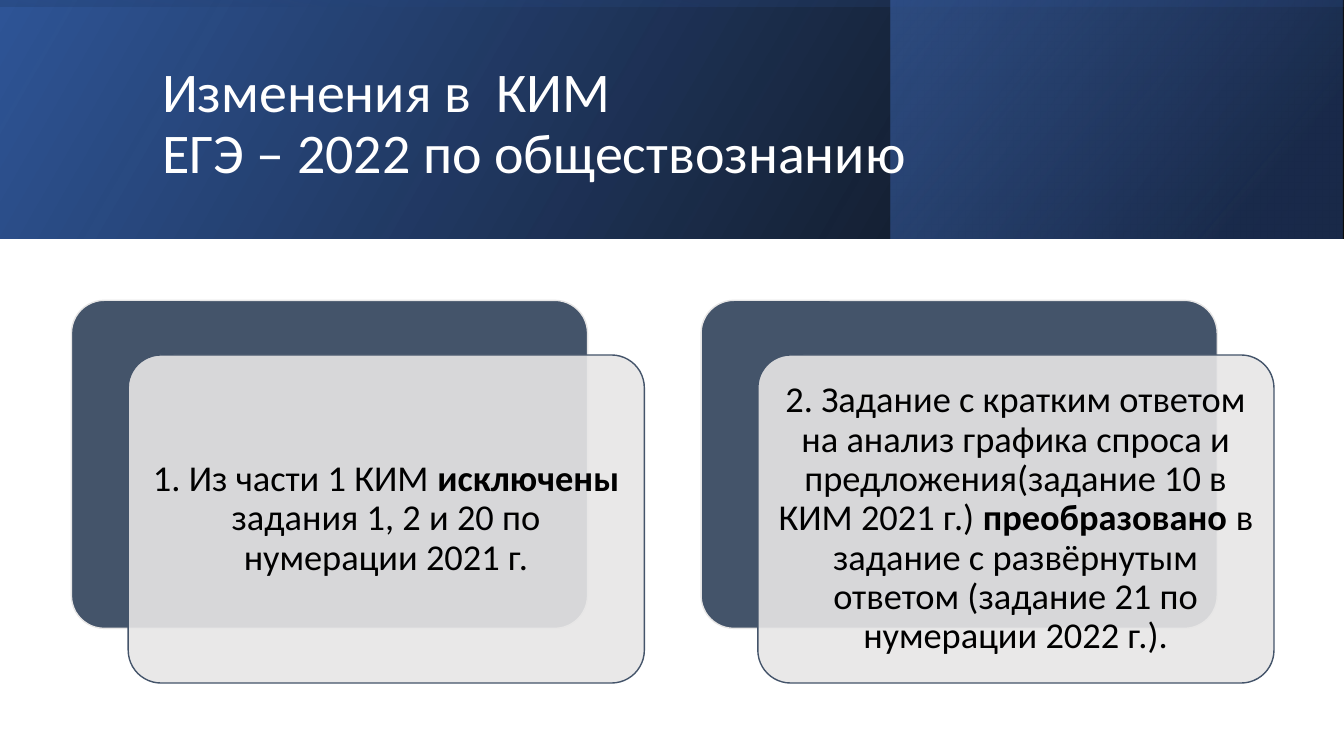
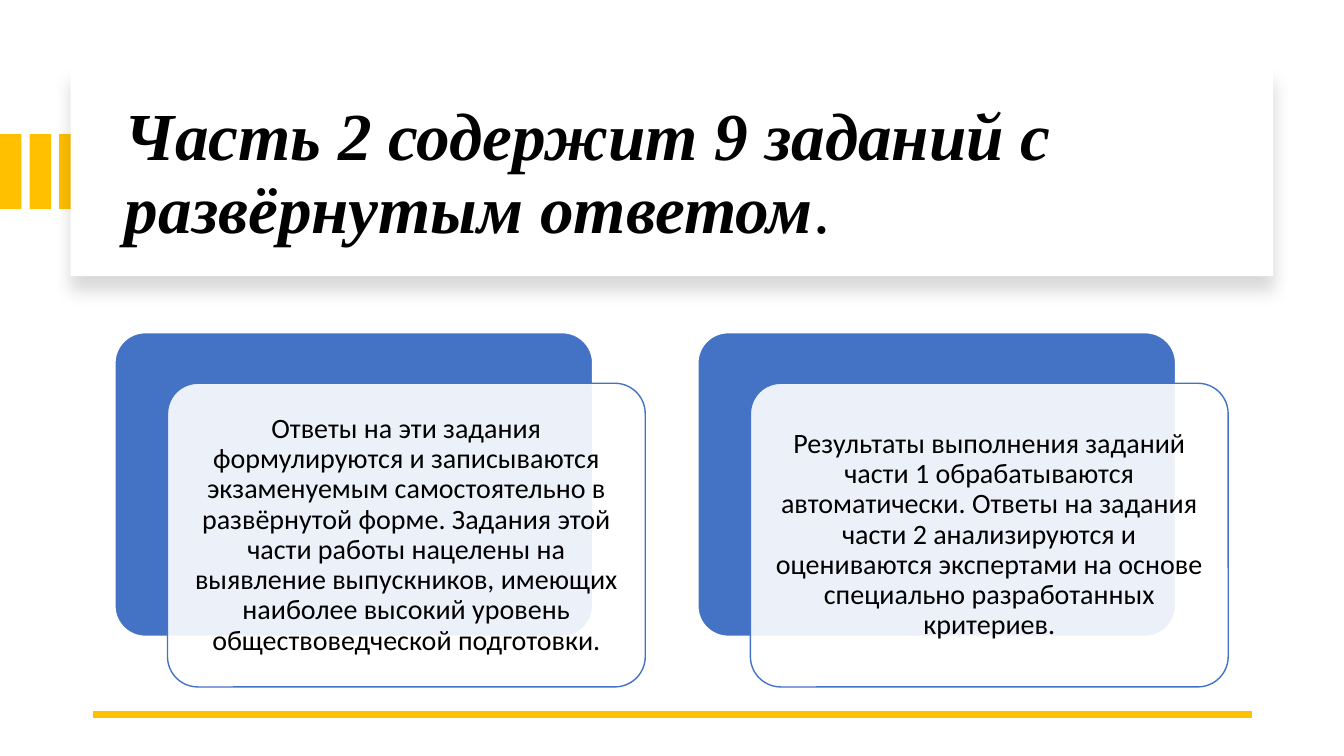
from lxml import etree
from pptx import Presentation
from pptx.dml.color import RGBColor
from pptx.enum.shapes import MSO_CONNECTOR, MSO_SHAPE
from pptx.enum.text import MSO_ANCHOR, PP_ALIGN
from pptx.oxml import parse_xml
from pptx.oxml.ns import qn
from pptx.util import Inches, Pt

RECT, ROUND = MSO_SHAPE.RECTANGLE, MSO_SHAPE.ROUNDED_RECTANGLE
STRAIGHT = MSO_CONNECTOR.STRAIGHT
MIDDLE = MSO_ANCHOR.MIDDLE
LEFT, CENTER = PP_ALIGN.LEFT, PP_ALIGN.CENTER

NS = "http://schemas.openxmlformats.org/drawingml/2006/main"
C = {
    "black": "000000", "white": "FFFFFF", "blue": "4472C4", "deep": "2F5597",
    "navy": "203864", "slate": "44546A", "gray": "E7E6E6", "gold": "FFC000",
}
SANS, SERIF = "Calibri", "Times New Roman"


def rgb(name):
    return RGBColor.from_string(C[name])


def add_color(parent, name, alpha):
    """Append a colour with an opacity in percent to an XML parent."""
    color = etree.SubElement(parent, qn("a:srgbClr"), val=C[name])
    etree.SubElement(color, qn("a:alpha"), val=str(alpha * 1000))


def write(tf, runs, size=20, font=SANS, color="black", align=LEFT):
    """Fill a frame with (text, bold, italic) runs; a newline breaks the line."""
    tf.word_wrap = True
    tf.vertical_anchor = MIDDLE
    p = tf.paragraphs[0]
    p.alignment = align
    p.line_spacing = 0.9
    for text, bold, italic in runs:
        for i, line in enumerate(text.split("\n")):
            if i:
                p.add_line_break()
            r = p.add_run()
            r.text = line
            r.font.name, r.font.size = font, Pt(size)
            r.font.bold, r.font.italic = bold, italic
            r.font.color.rgb = rgb(color)


class Deck:
    """Holds the style and the current slide; lengths are percent of the slide."""

    def __init__(self):
        self.prs = Presentation()
        self.prs.slide_width, self.prs.slide_height = Inches(13.33), Inches(7.5)
        self.slide = None

    def new_slide(self):
        self.slide = self.prs.slides.add_slide(self.prs.slide_layouts[6])

    def box(self, x, y, w, h):
        sw, sh = self.prs.slide_width, self.prs.slide_height
        return [round(share * side / 100)
                for share, side in zip((x, y, w, h), (sw, sh, sw, sh))]

    def shape(self, at, fill=None, line=None, kind=RECT, alpha=100):
        s = self.slide.shapes.add_shape(kind, *self.box(*at))
        s.shadow.inherit = False
        if fill:
            s.fill.solid()
            s.fill.fore_color.rgb = rgb(fill)
            color = s.fill._xPr.find(qn("a:solidFill"))[0]
            if alpha < 100:
                etree.SubElement(color, qn("a:alpha"), val=str(alpha * 1000))
        if line:
            s.line.color.rgb = rgb(line)
            s.line.width = Pt(1)
        else:
            s.line.fill.background()
        return s

    def gradient(self, at, stops, angle, turned=False):
        """Add a mirrored gradient band; a turned one is rotated to fill its box."""
        s = self.shape(at)
        if turned:
            cx, cy = s.left + s.width // 2, s.top + s.height // 2
            s.width, s.height = s.height, s.width
            s.left, s.top = cx - s.width // 2, cy - s.height // 2
            s.rotation = 270
        spPr = s._element.spPr
        spPr.find(qn("a:xfrm")).set("flipH", "1")
        grad = parse_xml(f'<a:gradFill xmlns:a="{NS}" rotWithShape="1"><a:gsLst/>'
                         f'<a:lin ang="{angle * 60000}" scaled="0"/></a:gradFill>')
        for pos, name, alpha in stops:
            gs = etree.SubElement(grad[0], qn("a:gs"), pos=str(pos * 1000))
            add_color(gs, name, alpha)
        spPr.find(qn("a:prstGeom")).addnext(grad)

    def panel(self, at):
        """Add a white panel with a soft shadow below."""
        s = self.shape(at, "white")
        effects = s._element.spPr.find(qn("a:effectLst"))
        shadow = etree.SubElement(
            effects, qn("a:outerShdw"), blurRad=str(Pt(11)), dist=str(Pt(10)),
            dir=str(90 * 60000), algn="t", rotWithShape="0")
        add_color(shadow, "black", 15)

    def title(self, at, runs, **style):
        write(self.slide.shapes.add_textbox(*self.box(*at)).text_frame, runs, **style)

    def rule(self, x1, x2, y):
        x1, y, x2, _ = self.box(x1, y, x2, 0)
        s = self.slide.shapes.add_connector(STRAIGHT, x1, y, x2, y)
        s.line.color.rgb = rgb("gold")
        s.line.width = Pt(4.5)
        etree.SubElement(s._element.spPr, qn("a:effectLst"))

    def cards(self, x, y, w, texts, dark, light, size):
        """Add a row of cards, each a dark plate under a shifted light one."""
        h = 1.13 * w
        for i, runs in enumerate(texts):
            left = x + i * 1.22 * w
            back = self.shape((left, y, w, h), dark, light, ROUND)
            front = self.shape((left + 0.11 * w, y + h / 6, w, h),
                               light, dark, ROUND, alpha=90)
            back.adjustments[0] = front.adjustments[0] = 0.1
            tf = front.text_frame
            tf.margin_left = tf.margin_right = Pt(0.3 * size)
            tf.margin_top = tf.margin_bottom = Pt(0.3 * size)
            write(tf, runs, size=size, align=CENTER)


def changes_slide(deck):
    deck.new_slide()
    band = (0, 0, 100, 31.6)
    deck.gradient(band, [(0, "black", 96), (100, "deep", 100)], 330)
    deck.gradient((66.3, 0, 33.6, 31.6), [(19, "navy", 68), (100, "blue", 48)], 320)
    deck.gradient(band, [(23, "deep", 16), (99, "black", 45)], 350, turned=True)
    deck.title((11.32, 5.07, 79.72, 22.93),
               [("Изменения в  КИМ\nЕГЭ – 2022 по обществознанию", False, False)],
               size=40, color="white")
    deck.cards(5.32, 39.73, 38.4, [
        [("1. Из части 1 КИМ ", False, False),
         ("исключены ", True, False),
         ("задания 1, 2 и 20 по нумерации 2021 г.", False, False)],
        [("2. Задание с кратким ответом на анализ графика спроса и "
          "предложения(задание 10 в КИМ 2021 г.) ", False, False),
         ("преобразовано", True, False),
         (" в задание с развёрнутым ответом (задание 21 по "
          "нумерации 2022 г.).", False, False)],
    ], "slate", "gray", 26)


def part_two_slide(deck):
    deck.new_slide()
    for i in range(3):
        deck.shape((i * 2.2, 17.75, 1.6, 9.9), "gold")
    deck.panel((5.25, 8.93, 89.48, 27.6))
    deck.title((8.55, 11.87, 83.48, 22.67),
               [("Часть 2 содержит 9 заданий с развёрнутым ответом", True, True),
                (".", False, False)],
               size=48, font=SERIF)
    deck.rule(93.15, 6.9, 94.53)
    deck.cards(8.55, 44, 35.55, [
        [("Ответы на эти задания формулируются и записываются экзаменуемым "
          "самостоятельно в развёрнутой форме. Задания этой части работы нацелены "
          "на выявление выпускников, имеющих наиболее высокий уровень "
          "обществоведческой подготовки.", False, False)],
        [("Результаты выполнения заданий части 1 обрабатываются автоматически. "
          "Ответы на задания части 2 анализируются и оцениваются экспертами на "
          "основе специально разработанных критериев.", False, False)],
    ], "blue", "white", 20)


def main():
    deck = Deck()
    changes_slide(deck)
    part_two_slide(deck)
    deck.prs.save("out.pptx")


if __name__ == "__main__":
    main()
